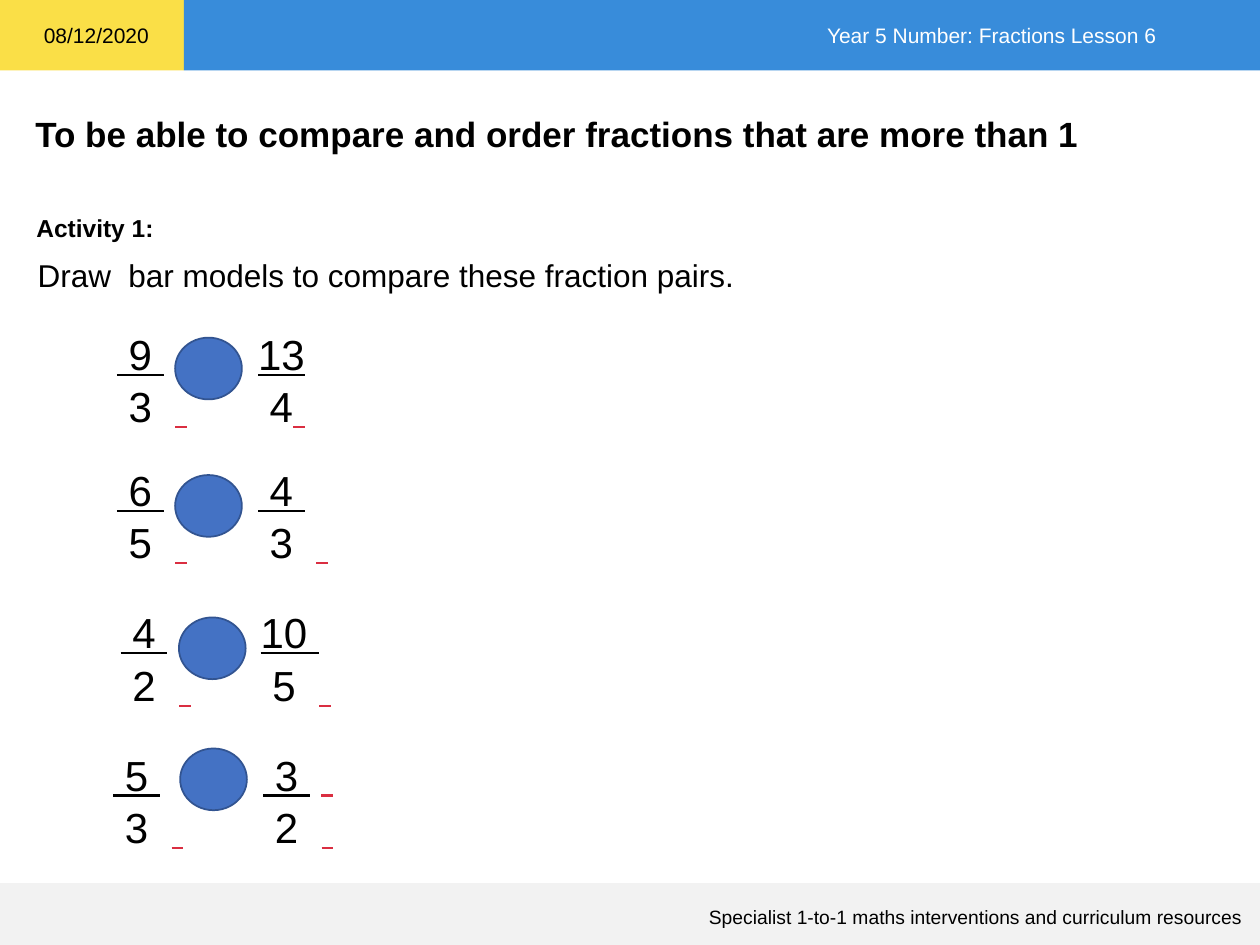
import pptx
import pptx.util
import pptx.dml.color
import pptx.enum.shapes
import pptx.enum.text

Inches = pptx.util.Inches
RGBColor = pptx.dml.color.RGBColor
Shape = pptx.enum.shapes.MSO_SHAPE
Anchor = pptx.enum.text.MSO_ANCHOR
Align = pptx.enum.text.PP_ALIGN

BLACK = RGBColor(0x00, 0x00, 0x00)
WHITE = RGBColor(0xFF, 0xFF, 0xFF)
YELLOW = RGBColor(0xFA, 0xDF, 0x47)
SKY = RGBColor(0x38, 0x8C, 0xDA)
GREY = RGBColor(0xF2, 0xF2, 0xF2)
RED = RGBColor(0xDA, 0x2E, 0x41)
BLUE = RGBColor(0x44, 0x72, 0xC4)
NAVY = RGBColor(0x32, 0x54, 0x91)

WIDTH, HEIGHT = 10, 7.5
HEADER, DATE_WIDTH, FOOTER_TOP = 0.56, 1.46, 7.01

TITLE = "To be able to compare and order fractions that are more than 1"
HEADING = "Year 5 Number: Fractions Lesson 6"
LABELS = [
    ("Specialist 1-to-1 maths interventions and curriculum resources",
     (0.42, 7.13, 9.54, 0.3), 11, False, Align.RIGHT),
    ("08/12/2020", (0.25, 0.13, 1.04, 0.3), 12, False, Align.LEFT),
    ("Activity 1:", (0.19, 1.64, 1.3, 0.34), 14, True, Align.LEFT),
    ("Draw  bar models to compare these fraction pairs.",
     (0.2, 1.98, 7.1, 0.41), 18, False, Align.LEFT),
]

DOT_TAIL = [(".", WHITE, True), (" ", RED, True)]
BAR_TAIL = [("_", WHITE, True), (" ", RED, True)]
RED_TAIL = [(" ", RED, True)]

PAIRS = [
    (2.52, (0.83, " 9 ", DOT_TAIL, " 3", BAR_TAIL),
     (1.95, "13", [], " 4", RED_TAIL), (1.39, 2.68)),
    (3.6, (0.83, " 6 ", DOT_TAIL, " 5", BAR_TAIL),
     (1.95, " 4 ", [], " 3", BAR_TAIL), (1.39, 3.77)),
    (4.73, (0.86, " 4 ", DOT_TAIL, " 2", BAR_TAIL),
     (1.97, "10 ", [], " 5", BAR_TAIL), (1.42, 4.9)),
    (5.86, (0.8, " 5 ", [], " 3", BAR_TAIL),
     (1.99, " 3 ", DOT_TAIL, " 2", BAR_TAIL), (1.43, 5.94)),
]
FRACTION_SIZE = (0.75, 1.31)
CIRCLE_SIZE = (0.53, 0.49)


def add_span(para, text, size, color=BLACK, bold=False, underline=False):
    span = para.add_run()
    span.text = text
    span.font.name = "Arial"
    span.font.size = pptx.util.Pt(size)
    span.font.bold = bold
    span.font.underline = underline
    span.font.color.rgb = color


def add_solid(page, kind, place, fill, line=None):
    shape = page.shapes.add_shape(kind, *map(Inches, place))
    shape.shadow.inherit = False
    shape.fill.solid()
    shape.fill.fore_color.rgb = fill
    if line is None:
        shape.line.fill.background()
    else:
        shape.line.color.rgb = line
        shape.line.width = pptx.util.Pt(1)
    return shape


def add_box(page, place):
    box = page.shapes.add_textbox(*map(Inches, place))
    box.text_frame.word_wrap = True
    return box.text_frame


def add_fraction(page, top, left, numerator, upper_tail, denominator, lower_tail):
    frame = add_box(page, (left, top + 0.02, *FRACTION_SIZE))
    frame.margin_right = 0
    lines = [
        [(numerator, BLACK, True)] + upper_tail,
        [(denominator, BLACK, False)] + lower_tail,
    ]
    for index, line in enumerate(lines):
        para = frame.add_paragraph() if index else frame.paragraphs[0]
        para.line_spacing = 1.04
        for text, color, underline in line:
            add_span(para, text, 24, color, underline=underline)


def main():
    deck = pptx.Presentation()
    deck.slide_width, deck.slide_height = Inches(WIDTH), Inches(HEIGHT)
    page = deck.slides.add_slide(deck.slide_layouts[5])

    add_solid(page, Shape.RECTANGLE, (0, 0, DATE_WIDTH, HEADER), YELLOW)
    banner = add_solid(page, Shape.RECTANGLE,
                       (DATE_WIDTH, 0, WIDTH - DATE_WIDTH, HEADER), SKY)
    add_solid(page, Shape.RECTANGLE,
              (0, FOOTER_TOP, WIDTH, HEIGHT - FOOTER_TOP), GREY)
    frame = banner.text_frame
    frame.vertical_anchor = Anchor.MIDDLE
    frame.margin_right = Inches(0.82)
    frame.paragraphs[0].alignment = Align.RIGHT
    add_span(frame.paragraphs[0], HEADING, 12, WHITE)

    title = page.shapes.title
    title.left, title.top, title.width, title.height = map(
        Inches, (0.18, 0.84, 9.64, 0.44))
    title.text_frame.vertical_anchor = Anchor.TOP
    title.text_frame.auto_size = pptx.enum.text.MSO_AUTO_SIZE.NONE
    title.text_frame.paragraphs[0].alignment = Align.LEFT
    add_span(title.text_frame.paragraphs[0], TITLE, 20, bold=True)

    for text, place, size, bold, align in LABELS:
        frame = add_box(page, place)
        frame.vertical_anchor = Anchor.MIDDLE
        frame.paragraphs[0].alignment = align
        add_span(frame.paragraphs[0], text, size, bold=bold)

    for top, left_fraction, right_fraction, circle in PAIRS:
        add_fraction(page, top, *left_fraction)
        add_fraction(page, top, *right_fraction)
        add_solid(page, Shape.OVAL, (*circle, *CIRCLE_SIZE), BLUE, NAVY)

    deck.save("out.pptx")


if __name__ == "__main__":
    main()
